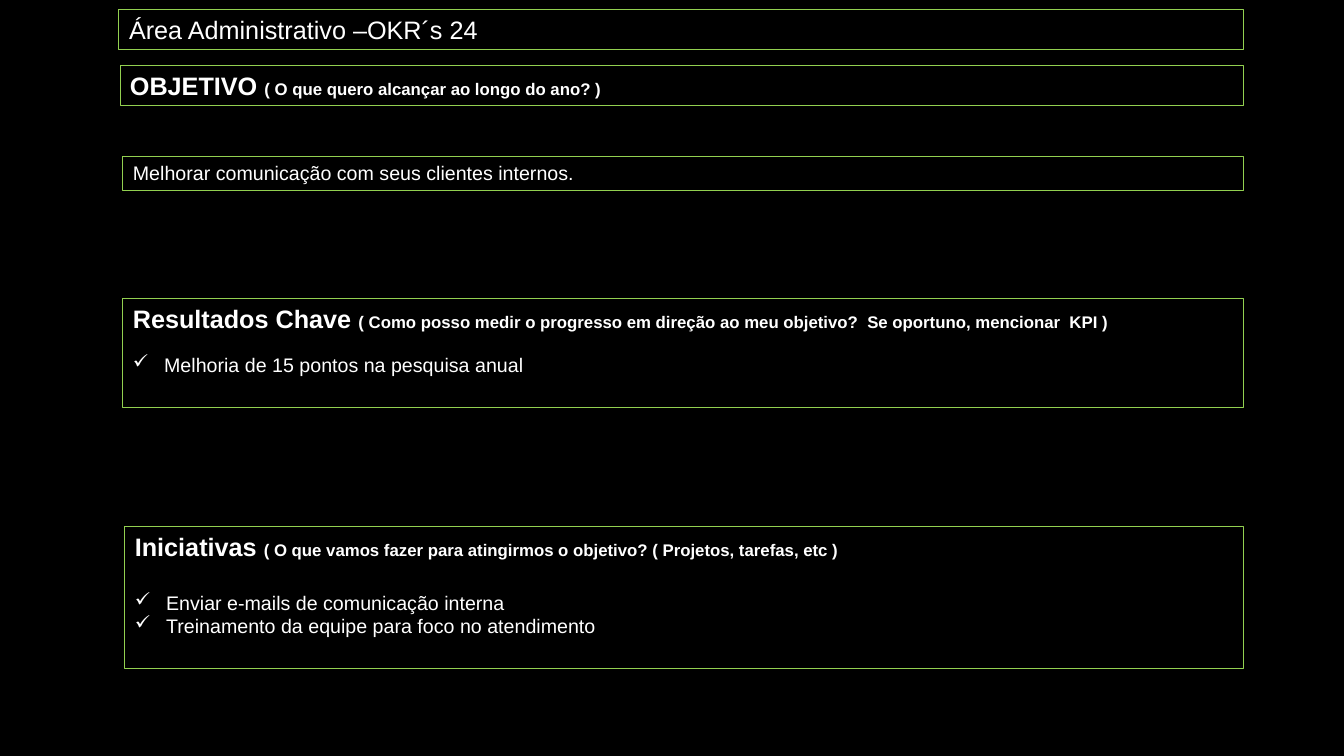
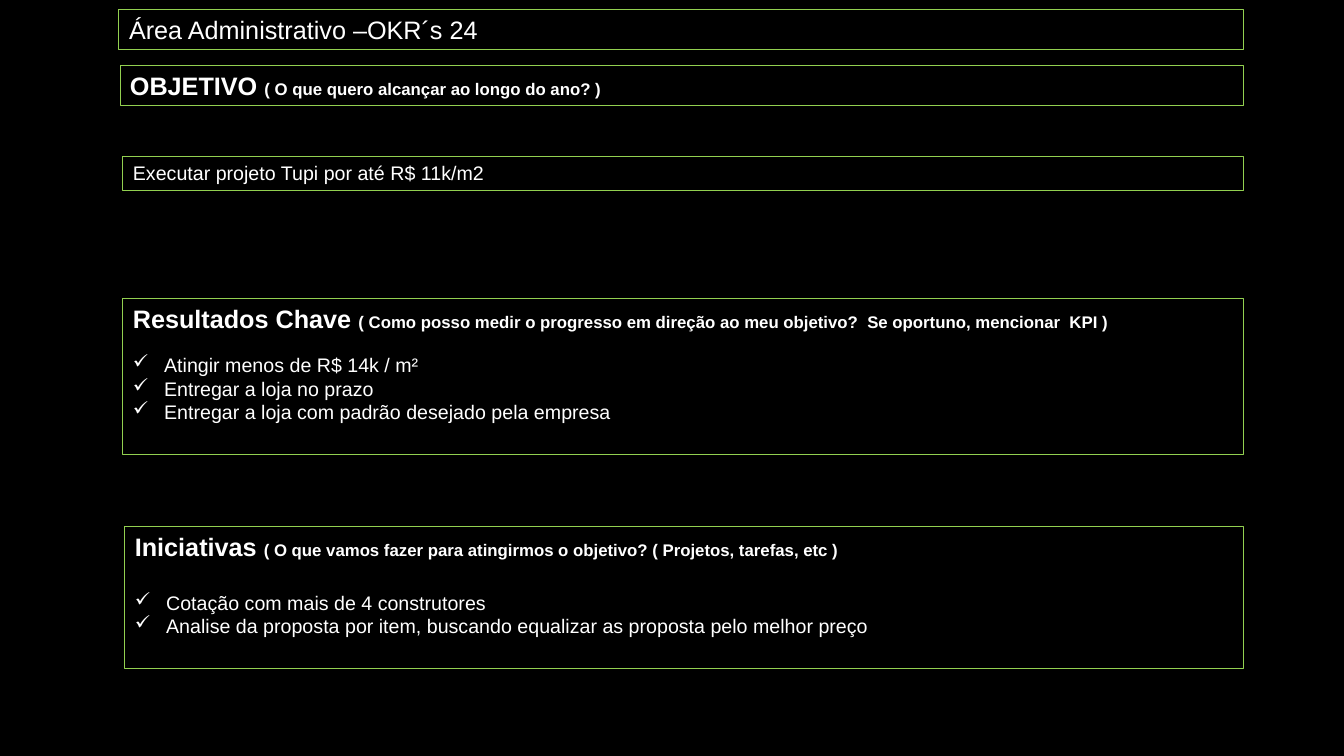
from dataclasses import dataclass

from lxml.etree import SubElement
from pptx import Presentation
from pptx.dml.color import RGBColor
from pptx.enum.shapes import MSO_SHAPE
from pptx.enum.text import MSO_ANCHOR, MSO_AUTO_SIZE, PP_ALIGN
from pptx.oxml.ns import qn
from pptx.util import Inches, Pt


@dataclass(frozen=True)
class Theme:
    background: RGBColor = RGBColor(0x00, 0x00, 0x00)
    text: RGBColor = RGBColor(0xFF, 0xFF, 0xFF)
    border: RGBColor = RGBColor(0x92, 0xD0, 0x50)
    font: str = "Arial"
    heading: int = 18
    body: int = 14
    question: int = 12
    border_width: float = 0.75
    indent: float = 0.31


RIGHT_EDGE = 92.5
HEADING_HEIGHT = 5.33
LINE_HEIGHT = 3.13
TITLE = "Área Administrativo –OKR´s 24"
OBJECTIVE = ("OBJETIVO ", "( O que quero alcançar ao longo do ano? )")
KEY_RESULTS = (
    "Resultados Chave ",
    "( Como posso medir o progresso em direção ao meu objetivo?  Se oportuno, mencionar  KPI )",
)
INITIATIVES = ("Iniciativas ", "( O que vamos fazer para atingirmos o objetivo? ( Projetos, tarefas, etc )")

OKRS = [
    {
        "objective": "Melhorar comunicação com seus clientes internos.",
        "results": ["Melhoria de 15 pontos na pesquisa anual"],
        "initiatives": [
            "Enviar e-mails de comunicação interna",
            "Treinamento da equipe para foco no atendimento",
        ],
    },
    {
        "objective": "Executar projeto Tupi por até R$ 11k/m2",
        "results": [
            "Atingir menos de R$ 14k / m²",
            "Entregar a loja no prazo",
            "Entregar a loja com padrão desejado pela empresa",
        ],
        "initiatives": [
            "Cotação com mais de 4 construtores",
            "Analise da proposta por item, buscando equalizar as proposta pelo melhor preço",
        ],
    },
]


class OkrDeck:
    def __init__(self, theme):
        self.theme = theme
        self.deck = Presentation()
        self.deck.slide_width = Inches(13.33)
        self.deck.slide_height = Inches(7.5)
        backdrop = self.deck.slide_master.background.fill
        backdrop.solid()
        backdrop.fore_color.rgb = theme.background
        self.slide = None

    def bounds(self, left, top, height):
        across = self.deck.slide_width / 100
        down = self.deck.slide_height / 100
        return [
            round(share)
            for share in (left * across, top * down, (RIGHT_EDGE - left) * across, height * down)
        ]

    def outline(self, panel):
        panel.fill.background()
        panel.line.color.rgb = self.theme.border
        panel.line.width = Pt(self.theme.border_width)
        frame = panel.text_frame
        frame.word_wrap = True
        frame.auto_size = MSO_AUTO_SIZE.NONE
        frame.vertical_anchor = MSO_ANCHOR.TOP
        return frame

    def style(self, text, size, bold=False):
        text.font.name = self.theme.font
        text.font.size = Pt(size)
        text.font.bold = bold
        text.font.color.rgb = self.theme.text

    def add_title(self, title):
        self.slide = self.deck.slides.add_slide(self.deck.slide_layouts[5])
        heading = self.slide.shapes.title
        heading.left, heading.top, heading.width, heading.height = self.bounds(8.85, 1.2, HEADING_HEIGHT)
        frame = self.outline(heading)
        frame.text = title
        frame.paragraphs[0].alignment = PP_ALIGN.LEFT
        self.style(frame.paragraphs[0].runs[0], self.theme.heading)

    def add_panel(self, left, top, height):
        panel = self.slide.shapes.add_shape(MSO_SHAPE.RECTANGLE, *self.bounds(left, top, height))
        panel.shadow.inherit = False
        frame = self.outline(panel)
        frame.paragraphs[0].alignment = PP_ALIGN.LEFT
        return frame

    def add_statement(self, left, top, height, statement):
        frame = self.add_panel(left, top, height)
        frame.text = statement
        self.style(frame.paragraphs[0].runs[0], self.theme.body)

    def add_section(self, left, top, height, heading, items=(), gap=0):
        frame = self.add_panel(left, top, height + LINE_HEIGHT * len(items))
        for words, size in zip(heading, (self.theme.heading, self.theme.question)):
            run = frame.paragraphs[0].add_run()
            run.text = words
            self.style(run, size, bold=True)
        for position, item in enumerate(items):
            self.add_check(frame, item, 0 if position else gap)

    def add_check(self, frame, item, gap):
        entry = frame.add_paragraph()
        entry.text = item
        entry.alignment = PP_ALIGN.LEFT
        entry.space_before = Pt(gap)
        properties = entry._p.get_or_add_pPr()
        indent = Inches(self.theme.indent)
        properties.set("marL", str(indent))
        properties.set("indent", str(-indent))
        SubElement(properties, qn("a:buChar")).set("char", "✓")
        self.style(entry.runs[0], self.theme.body)

    def add_okr(self, objective, results, initiatives):
        self.add_title(TITLE)
        self.add_section(8.93, 8.67, HEADING_HEIGHT, OBJECTIVE)
        self.add_statement(9.15, 20.67, 4.53, objective)
        self.add_section(9.15, 39.47, 11.27, KEY_RESULTS, results, gap=14)
        self.add_section(9.3, 69.6, 12.53, INITIATIVES, initiatives, gap=21)


def main():
    okr_deck = OkrDeck(Theme())
    for okr in OKRS:
        okr_deck.add_okr(**okr)
    okr_deck.deck.save("out.pptx")


if __name__ == "__main__":
    main()
